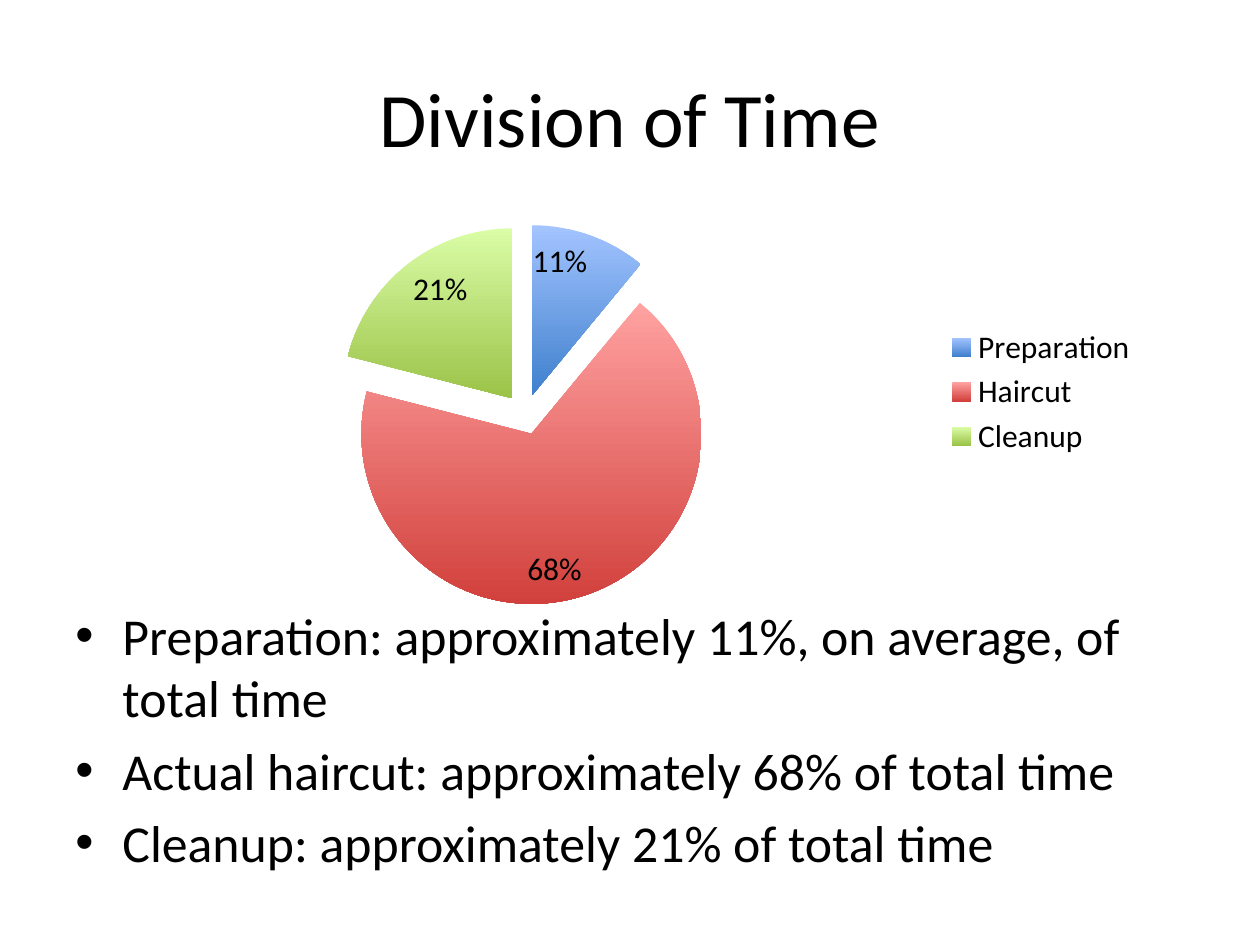
from typing import NamedTuple

from lxml.etree import SubElement
from pptx import Presentation
from pptx.chart.data import CategoryChartData
from pptx.dml.color import RGBColor
from pptx.enum.chart import XL_CHART_TYPE as ChartType
from pptx.enum.chart import XL_LABEL_POSITION as LabelPosition
from pptx.enum.chart import XL_LEGEND_POSITION as LegendPosition
from pptx.enum.text import MSO_ANCHOR as Anchor
from pptx.enum.text import PP_ALIGN as Align
from pptx.oxml import parse_xml
from pptx.oxml.ns import nsdecls, qn
from pptx.util import Cm, Pt

FONT = "Calibri"
COLORS = {
    "text": "000000",
    "blue_top": "A3C4FF", "blue_bottom": "3F80CD",
    "red_top": "FFA2A1", "red_bottom": "D1403C",
    "green_top": "DAFDA7", "green_bottom": "9BC348",
}


class Box(NamedTuple):
    left: float
    top: float
    width: float
    height: float

    def lengths(self) -> list[Cm]:
        return [Cm(value) for value in self]


class Phase(NamedTuple):
    name: str
    percent: int
    hue: str
    summary: str


PHASES = [
    Phase("Preparation", 11, "blue",
          "Preparation: approximately 11%, on average, of total time"),
    Phase("Haircut", 68, "red", "Actual haircut: approximately 68% of total time"),
    Phase("Cleanup", 21, "green", "Cleanup: approximately 21% of total time"),
]


def rgb(name: str) -> RGBColor:
    return RGBColor.from_string(COLORS[name])


def set_font(font, size: float) -> None:
    font.name = FONT
    font.size = Pt(size)
    font.color.rgb = rgb("text")


def add_bullet(paragraph, indent: float) -> None:
    properties = paragraph._p.get_or_add_pPr()
    properties.set("marL", str(Cm(indent)))
    properties.set("indent", str(-Cm(indent)))
    SubElement(properties, qn("a:buFont"), typeface="Arial")
    SubElement(properties, qn("a:buChar"), char="•")


def add_text(slide, box: Box, lines: list[str], *, size: float,
             align: Align = Align.LEFT, anchor: Anchor = Anchor.TOP,
             space_before: float = 0, bullet_indent: float = 0) -> None:
    frame = slide.shapes.add_textbox(*box.lengths()).text_frame
    frame.word_wrap = True
    frame.vertical_anchor = anchor
    for index, line in enumerate(lines):
        paragraph = frame.add_paragraph() if index else frame.paragraphs[0]
        paragraph.alignment = align
        paragraph.space_before = Pt(space_before)
        if bullet_indent:
            add_bullet(paragraph, bullet_indent)
        run = paragraph.add_run()
        run.text = line
        set_font(run.font, size)


def place_plot(chart, box: Box) -> None:
    """Fix the plot area; the box holds fractions of the chart frame."""
    plot_area = chart._chartSpace.chart.plotArea
    for old_layout in plot_area.findall(qn("c:layout")):
        plot_area.remove(old_layout)
    sizes = "".join(f'<c:{tag} val="{value}"/>' for tag, value in zip("xywh", box))
    plot_area.insert(0, parse_xml(
        f'<c:layout {nsdecls("c")}><c:manualLayout><c:layoutTarget val="inner"/>'
        f'<c:xMode val="edge"/><c:yMode val="edge"/>{sizes}'
        "</c:manualLayout></c:layout>"))


def explode(series, percent: int) -> None:
    explosion = parse_xml(f'<c:explosion {nsdecls("c")} val="{percent}"/>')
    series._element.find(qn("c:tx")).addnext(explosion)


def color_slice(point, hue: str) -> None:
    fill = point.format.fill
    fill.gradient()
    fill.gradient_angle = 270
    for stop, end in zip(fill.gradient_stops, ("top", "bottom")):
        stop.color.rgb = rgb(f"{hue}_{end}")
    point.format.line.fill.background()


def add_pie(slide, box: Box, phases: list[Phase]) -> None:
    data = CategoryChartData()
    data.categories = [phase.name for phase in phases]
    data.add_series("Series 1", [phase.percent for phase in phases])
    chart = slide.shapes.add_chart(ChartType.PIE, *box.lengths(), data).chart
    chart.has_title = False
    set_font(chart.font, 18)
    chart.has_legend = True
    chart.legend.position = LegendPosition.RIGHT
    chart.legend.include_in_layout = False
    set_font(chart.legend.font, 18)

    pie = chart.plots[0]
    pie.vary_by_categories = True
    pie.has_data_labels = True
    labels = pie.data_labels
    labels.show_percentage = True
    labels.show_value = False
    labels.number_format = "0%"
    labels.number_format_is_linked = False
    labels.position = LabelPosition.INSIDE_END
    set_font(labels.font, 18)

    series = pie.series[0]
    explode(series, 12)
    for index, phase in enumerate(phases):
        color_slice(series.points[index], phase.hue)
    place_plot(chart, Box(0.23, 0.13, 0.36, 0.84))


def main() -> None:
    deck = Presentation()
    deck.slide_width, deck.slide_height = Cm(25.4), Cm(19.05)
    slide = deck.slides.add_slide(deck.slide_layouts[6])
    add_text(slide, Box(1.27, 0.76, 22.86, 3.18), ["Division of Time"],
             size=44, align=Align.CENTER, anchor=Anchor.MIDDLE)
    add_pie(slide, Box(1.83, 3.33, 21.36, 9.14), PHASES)
    add_text(slide, Box(1.27, 12.04, 22.86, 5.51),
             [phase.summary for phase in PHASES],
             size=29.6, space_before=6, bullet_indent=0.95)
    deck.save("out.pptx")


if __name__ == "__main__":
    main()
